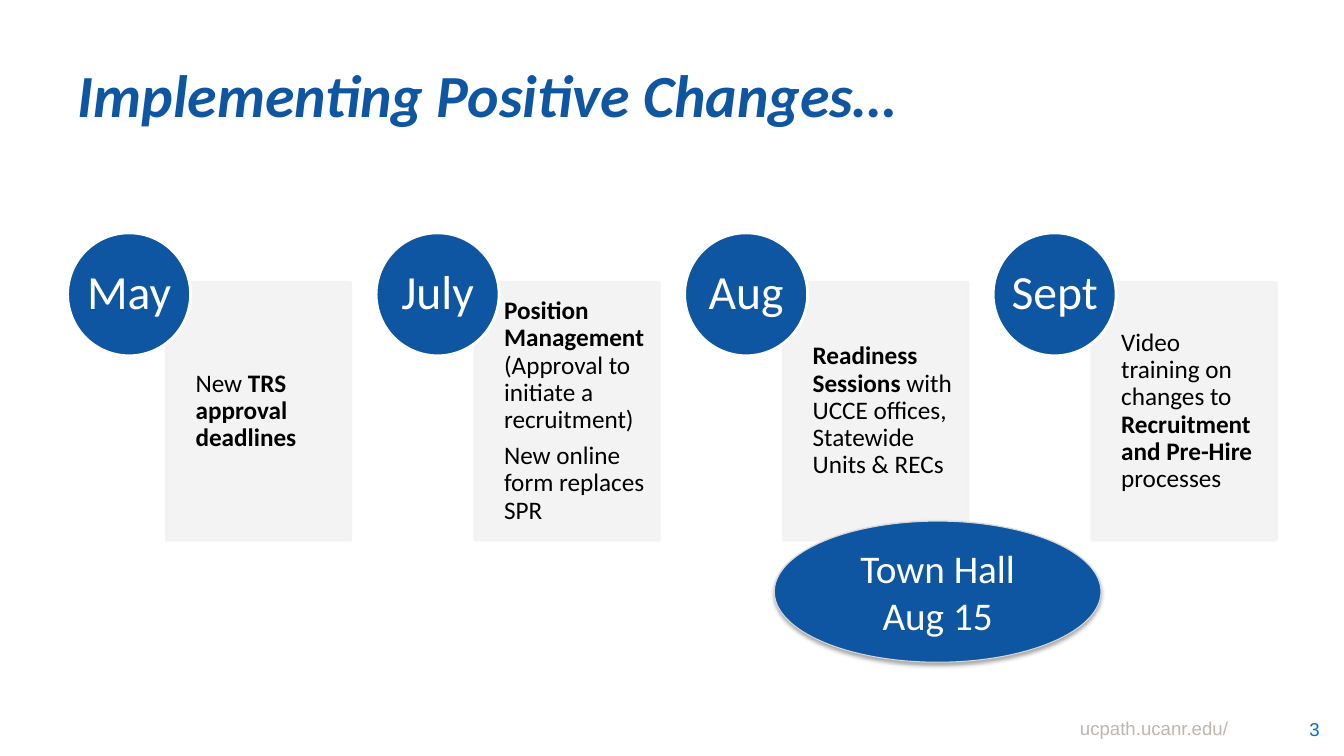
"""Build the timeline slide on implementing positive changes."""
from dataclasses import dataclass

import lxml.etree
import pptx
import pptx.dml.color
import pptx.enum.shapes
import pptx.enum.text
import pptx.oxml
import pptx.oxml.ns
import pptx.util

Inches = pptx.util.Inches
Align = pptx.enum.text.PP_ALIGN
Kind = pptx.enum.shapes.MSO_SHAPE
BLUE, WHITE, BLACK, PALE = "0E55A2", "FFFFFF", "000000", "F2F2F2"
FIRST_LEFT, STEP = 0.67, 3.06


@dataclass
class Span:
    text: str
    bold: bool = False


@dataclass
class Milestone:
    month: str
    paragraphs: list[list[Span]]


@dataclass
class Style:
    size: float
    color: str
    font: str = "Calibri"
    align: Align = Align.LEFT
    line_spacing: float = 1.0
    italic: bool = False


MILESTONES = [
    Milestone("May", [[Span("New "), Span("TRS approval deadlines", True)]]),
    Milestone("July", [
        [Span("Position Management ", True), Span("(Approval to initiate a recruitment)")],
        [Span("New online form replaces SPR")],
    ]),
    Milestone("Aug", [
        [Span("Readiness Sessions ", True), Span("with UCCE offices, Statewide Units & RECs")],
    ]),
    Milestone("Sept", [
        [Span("Video training on changes to "), Span("Recruitment and Pre-Hire ", True),
         Span("processes")],
    ]),
]


def rgb(color: str) -> pptx.dml.color.RGBColor:
    """Turn a hex string into a colour."""
    return pptx.dml.color.RGBColor.from_string(color)


def place(shape, left: float, top: float, width: float, height: float) -> None:
    """Move and size a shape in inches."""
    shape.left, shape.top = Inches(left), Inches(top)
    shape.width, shape.height = Inches(width), Inches(height)


def write(shape, paragraphs: list[list[Span]], style: Style,
          insets: tuple = (0.1, 0.05, 0.1, 0.05), wrap: bool = True) -> None:
    """Fill a shape with vertically centred, styled paragraphs."""
    frame = shape.text_frame
    frame.word_wrap = wrap
    frame.auto_size = pptx.enum.text.MSO_AUTO_SIZE.NONE
    frame.vertical_anchor = pptx.enum.text.MSO_ANCHOR.MIDDLE
    frame.margin_left, frame.margin_top, frame.margin_right, frame.margin_bottom = map(
        Inches, insets)
    for index, spans in enumerate(paragraphs):
        para = frame.add_paragraph() if index else frame.paragraphs[0]
        para.alignment, para.line_spacing = style.align, style.line_spacing
        para.space_before = pptx.util.Pt(0.35 * style.size if index else 0)
        for span in spans:
            run = para.add_run()
            run.text = span.text
            run.font.name, run.font.size = style.font, pptx.util.Pt(style.size)
            run.font.bold, run.font.italic = span.bold, style.italic
            run.font.color.rgb = rgb(style.color)


def add_figure(page, kind: Kind, bounds: tuple, fill: str, line: str, width: float):
    """Add a flat filled shape with an outline."""
    shape = page.shapes.add_shape(kind, *map(Inches, bounds))
    shape.shadow.inherit = False
    shape.fill.solid()
    shape.fill.fore_color.rgb = rgb(fill)
    shape.line.color.rgb = rgb(line)
    shape.line.width = pptx.util.Pt(width)
    return shape


def add_label(page, bounds: tuple, text: str, style: Style, insets: tuple) -> None:
    """Add a one-line text box."""
    box = page.shapes.add_textbox(*map(Inches, bounds))
    write(box, [[Span(text)]], style, insets)


def set_opacity(shape, percent: int) -> None:
    """Make the fill and the outline of a shape partly transparent."""
    for color in shape.fill._xPr.iter(pptx.oxml.ns.qn("a:srgbClr")):
        lxml.etree.SubElement(color, pptx.oxml.ns.qn("a:alpha"), val=str(percent * 1000))


def add_shadow(shape) -> None:
    """Give a shape a soft shadow below it."""
    effects = shape.fill._xPr.find(pptx.oxml.ns.qn("a:effectLst"))
    effects.append(pptx.oxml.parse_xml(
        f'<a:outerShdw {pptx.oxml.ns.nsdecls("a")} blurRad="{pptx.util.Pt(3.1)}" '
        f'dist="{pptx.util.Pt(1.8)}" dir="5400000" rotWithShape="0">'
        '<a:srgbClr val="000000"><a:alpha val="35000"/></a:srgbClr></a:outerShdw>'))


def add_milestone(page, milestone: Milestone, left: float) -> None:
    """Draw a card with its month circle."""
    card = add_figure(page, Kind.RECTANGLE, (left + 0.98, 2.8, 1.83, 2.56), PALE, PALE, 2)
    set_opacity(card, 90)
    write(card, milestone.paragraphs, Style(18, BLACK, line_spacing=0.9),
          (0.29, 0.14, 0.14, 0.14))
    circle = add_figure(page, Kind.OVAL, (left, 2.31, 1.22, 1.22), BLUE, WHITE, 2)
    write(circle, [[Span(milestone.month)]],
          Style(34, WHITE, align=Align.CENTER, line_spacing=0.9), (0, 0, 0, 0), wrap=False)


def main() -> None:
    """Build and save the deck."""
    deck = pptx.Presentation()
    deck.slide_width, deck.slide_height = Inches(13.33), Inches(7.5)
    page = deck.slides.add_slide(deck.slide_layouts.get_by_name("Title Only"))
    title = page.shapes.title
    place(title, 0.67, 0.3, 12, 1.25)
    write(title, [[Span("Implementing Positive Changes…", True)]],
          Style(42.7, BLUE, italic=True))
    add_label(page, (7.09, 6.97, 5.19, 0.53), "ucpath.ucanr.edu/",
              Style(13.3, "BEB6AF", "Arial", Align.RIGHT, 0.9), (0.1, 0.05, 0.1, 0.05))
    add_label(page, (12.09, 6.97, 1.13, 0.53), "3",
              Style(13.3, "0070C0", "Arial", Align.RIGHT), (0.13, 0.07, 0.13, 0.07))
    for index, milestone in enumerate(MILESTONES):
        add_milestone(page, milestone, FIRST_LEFT + index * STEP)
    town_hall = add_figure(page, Kind.OVAL, (7.68, 5.17, 3.24, 1.4), BLUE, "D8D8D8", 0.75)
    add_shadow(town_hall)
    write(town_hall, [[Span("Town Hall Aug 15")]], Style(28, WHITE, align=Align.CENTER))
    deck.save("out.pptx")


if __name__ == "__main__":
    main()
